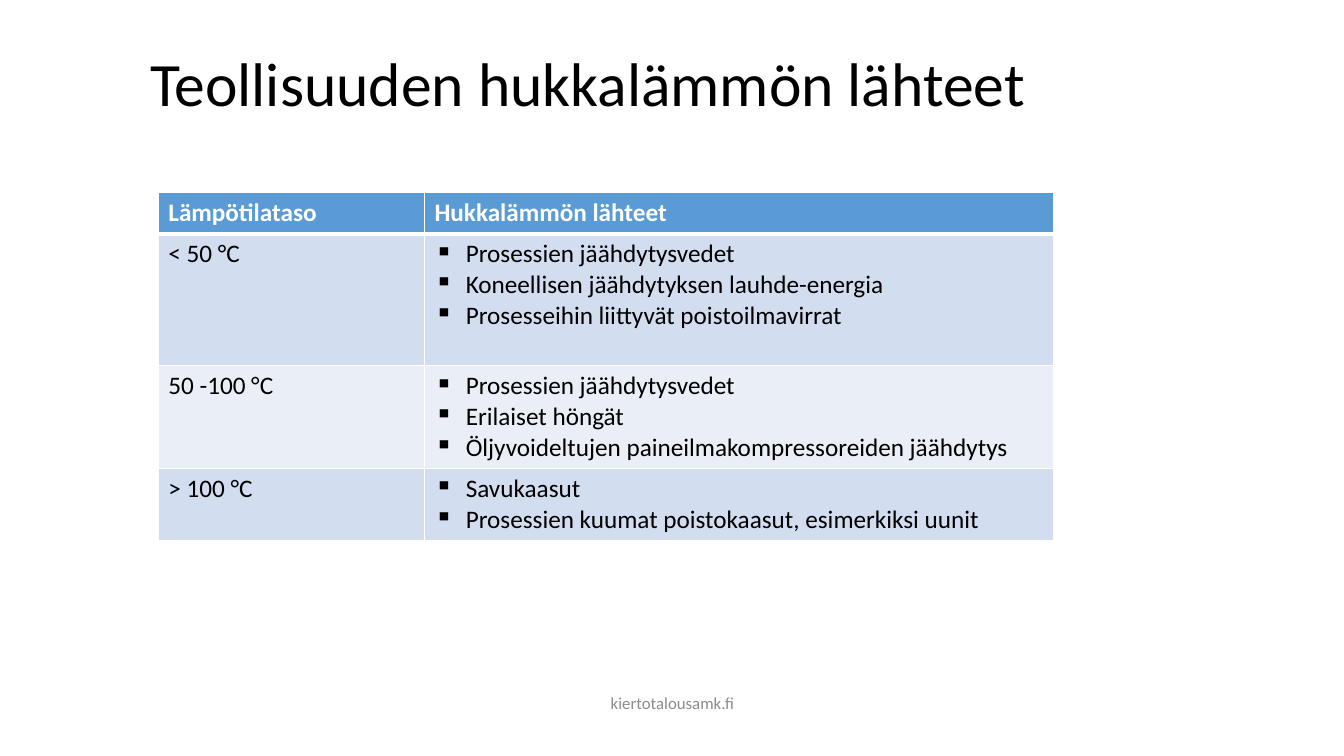
from lxml import etree
from pptx import Presentation
from pptx.dml.color import RGBColor
from pptx.enum.text import MSO_ANCHOR, PP_ALIGN
from pptx.oxml.ns import qn
from pptx.util import Inches, Pt

MIDDLE = MSO_ANCHOR.MIDDLE
LEFT = PP_ALIGN.LEFT
CENTER = PP_ALIGN.CENTER
FONT = "Calibri"
BULLET = "▪"
COLORS = {
    "text": "000000",
    "white": "FFFFFF",
    "footer": "8C8C8C",
    "header": "5B9BD5",
    "band_dark": "D2DEEF",
    "band_light": "EAEFF7",
}
COLUMN_WIDTHS = (2.64, 6.24)
ROW_HEIGHTS = (0.41, 1.31, 1.02, 0.71)
HEADINGS = ("Lämpötilataso", "Hukkalämmön lähteet")
SOURCES = (
    ("< 50 °C", (
        "Prosessien jäähdytysvedet",
        "Koneellisen jäähdytyksen lauhde-energia",
        "Prosesseihin liittyvät poistoilmavirrat",
    )),
    ("50 -100 °C", (
        "Prosessien jäähdytysvedet",
        "Erilaiset höngät",
        "Öljyvoideltujen paineilmakompressoreiden jäähdytys",
    )),
    ("> 100 °C", (
        "Savukaasut",
        "Prosessien kuumat poistokaasut, esimerkiksi uunit",
    )),
)


def add_bullet(para):
    properties = para._p.get_or_add_pPr()
    properties.set("marL", str(Inches(0.31)))
    properties.set("indent", str(-Inches(0.31)))
    etree.SubElement(properties, qn("a:buChar"), char=BULLET)


def write_para(para, text, size=18, color="text", bold=False, align=LEFT,
               spacing=None, bullet=False):
    if bullet:
        add_bullet(para)
    para.alignment = align
    if spacing:
        para.line_spacing = spacing
    span = para.add_run()
    span.text = text
    span.font.name = FONT
    span.font.size = Pt(size)
    span.font.bold = bold
    span.font.color.rgb = RGBColor.from_string(COLORS[color])


def add_text(page, text, left, top, width, height, **style):
    box = page.shapes.add_textbox(
        Inches(left), Inches(top), Inches(width), Inches(height))
    box.text_frame.word_wrap = True
    box.text_frame.vertical_anchor = MIDDLE
    write_para(box.text_frame.paragraphs[0], text, **style)


def set_borders(cell, top=1, bottom=1):
    properties = cell._tc.get_or_add_tcPr()
    for side, width in (("L", 1), ("R", 1), ("T", top), ("B", bottom)):
        line = etree.SubElement(properties, qn(f"a:ln{side}"), w=str(Pt(width)))
        fill = etree.SubElement(line, qn("a:solidFill"))
        etree.SubElement(fill, qn("a:srgbClr"), val=COLORS["white"])


def fill_cell(cell, lines, fill, top=1, bottom=1, **style):
    set_borders(cell, top, bottom)
    cell.fill.solid()
    cell.fill.fore_color.rgb = RGBColor.from_string(COLORS[fill])
    frame = cell.text_frame
    for index, line in enumerate(lines):
        para = frame.add_paragraph() if index else frame.paragraphs[0]
        write_para(para, line, **style)


def add_source_table(page):
    table = page.shapes.add_table(
        len(ROW_HEIGHTS), len(COLUMN_WIDTHS), Inches(1.57), Inches(1.91),
        Inches(sum(COLUMN_WIDTHS)), Inches(sum(ROW_HEIGHTS))).table
    for column, width in zip(table.columns, COLUMN_WIDTHS):
        column.width = Inches(width)
    for row, height in zip(table.rows, ROW_HEIGHTS):
        row.height = Inches(height)
    for index, heading in enumerate(HEADINGS):
        fill_cell(table.cell(0, index), [heading], "header", bottom=3,
                  color="white", bold=True)
    for row, (level, sources) in enumerate(SOURCES, start=1):
        fill = "band_dark" if row % 2 else "band_light"
        top = 3 if row == 1 else 1
        fill_cell(table.cell(row, 0), [level], fill, top=top)
        fill_cell(table.cell(row, 1), sources, fill, top=top, bullet=True)


def main():
    deck = Presentation()
    deck.slide_width = Inches(13.33)
    deck.slide_height = Inches(7.5)
    page = deck.slides.add_slide(deck.slide_layouts[6])
    add_text(page, "Teollisuuden hukkalämmön lähteet", 1.39, 0.13, 11.5, 1.45,
             size=44, spacing=0.9)
    add_source_table(page)
    add_text(page, "kiertotalousamk.fi", 4.42, 6.77, 4.5, 0.4,
             size=12, color="footer", align=CENTER)
    deck.save("out.pptx")


if __name__ == "__main__":
    main()
